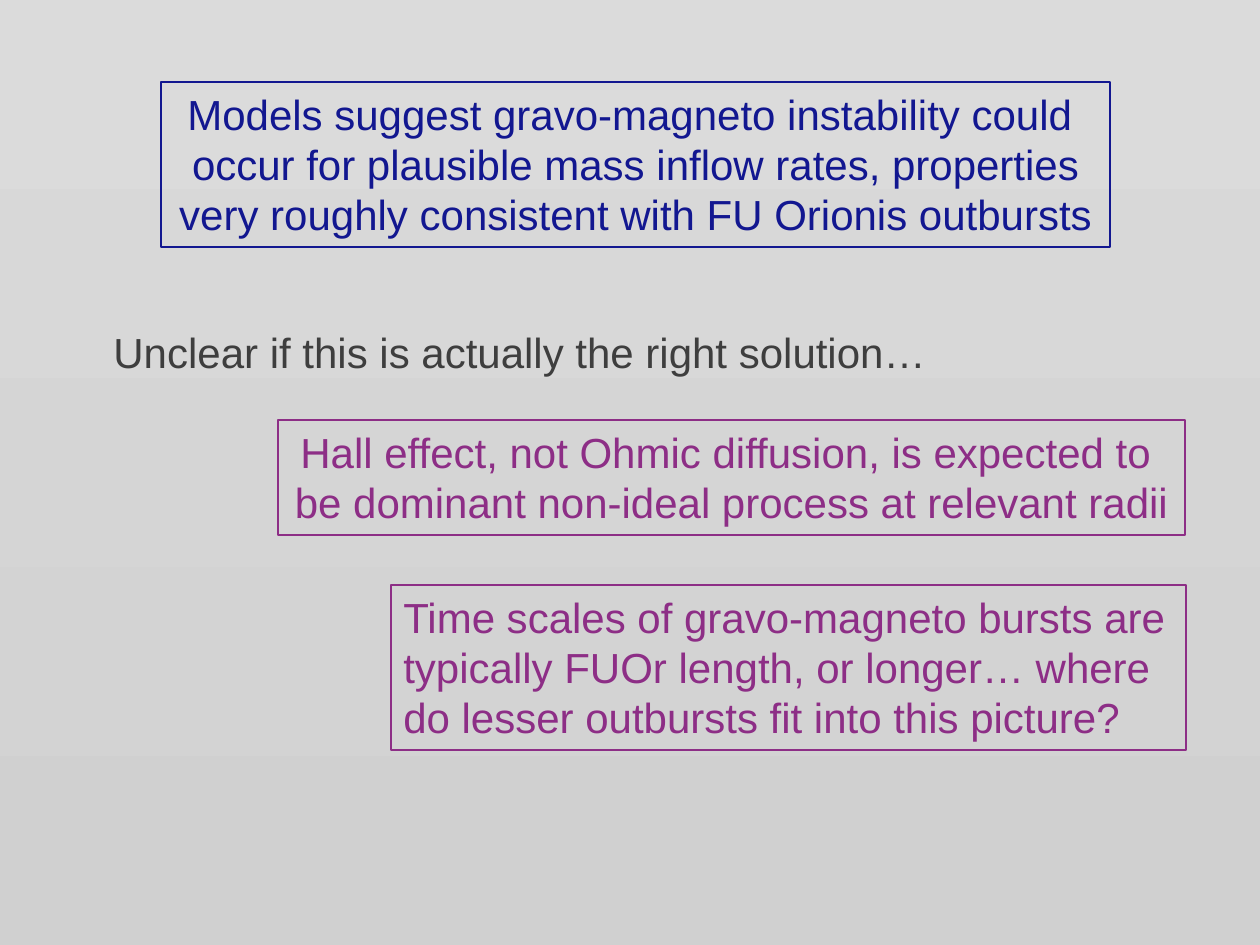
from dataclasses import dataclass

from pptx import Presentation
from pptx.dml.color import RGBColor as RGB
from pptx.enum.shapes import MSO_SHAPE as SHAPE
from pptx.enum.text import MSO_ANCHOR as ANCHOR, MSO_AUTO_SIZE as AUTO, PP_ALIGN as ALIGN
from pptx.util import Inches, Pt


@dataclass(frozen=True)
class Theme:
    font: str = "Arial"
    size: int = 24
    border: float = 0.75
    top: str = "DBDBDB"
    bottom: str = "D0D0D0"
    blue: str = "121790"
    purple: str = "8D2E86"
    gray: str = "3E3E3E"


THEME = Theme()


def px(n):
    return round(n * Inches(1) / 126)


def set_background(slide):
    fill = slide.background.fill
    fill.gradient()
    fill.gradient_angle = 270
    for stop, color in zip(fill.gradient_stops, (THEME.top, THEME.bottom)):
        stop.color.rgb = RGB.from_string(color)


def write_lines(s, lines, color, align):
    tf = s.text_frame
    tf.text = "\n".join(lines)
    tf.word_wrap = False
    tf.auto_size = AUTO.SHAPE_TO_FIT_TEXT
    tf.vertical_anchor = ANCHOR.TOP
    for p in tf.paragraphs:
        p.alignment = align
        for r in p.runs:
            r.font.name = THEME.font
            r.font.size = Pt(THEME.size)
            r.font.color.rgb = RGB.from_string(color)


def add_text(slide, box, lines, color, align=ALIGN.LEFT):
    s = slide.shapes.add_textbox(*map(px, box))
    write_lines(s, lines, color, align)


def add_framed_text(slide, box, lines, color, align=ALIGN.CENTER):
    s = slide.shapes.add_shape(SHAPE.RECTANGLE, *map(px, box))
    s.shadow.inherit = False
    s.fill.background()
    s.line.color.rgb = RGB.from_string(color)
    s.line.width = Pt(THEME.border)
    write_lines(s, lines, color, align)


def main():
    prs = Presentation()
    prs.slide_width, prs.slide_height = px(1260), px(945)
    slide = prs.slides.add_slide(prs.slide_layouts[6])
    set_background(slide)
    add_framed_text(slide, (161, 82, 949, 165), [
        "Models suggest gravo-magneto instability could ",
        "occur for plausible mass inflow rates, properties",
        "very roughly consistent with FU Orionis outbursts",
    ], THEME.blue)
    add_text(slide, (101, 320, 839, 63), [
        "Unclear if this is actually the right solution…",
    ], THEME.gray)
    add_framed_text(slide, (278, 420, 907, 115), [
        "Hall effect, not Ohmic diffusion, is expected to ",
        "be dominant non-ideal process at relevant radii",
    ], THEME.purple)
    add_framed_text(slide, (391, 585, 795, 165), [
        "Time scales of gravo-magneto bursts are",
        "typically FUOr length, or longer… where",
        "do lesser outbursts fit into this picture?",
    ], THEME.purple, ALIGN.LEFT)
    prs.save("out.pptx")


if __name__ == "__main__":
    main()
